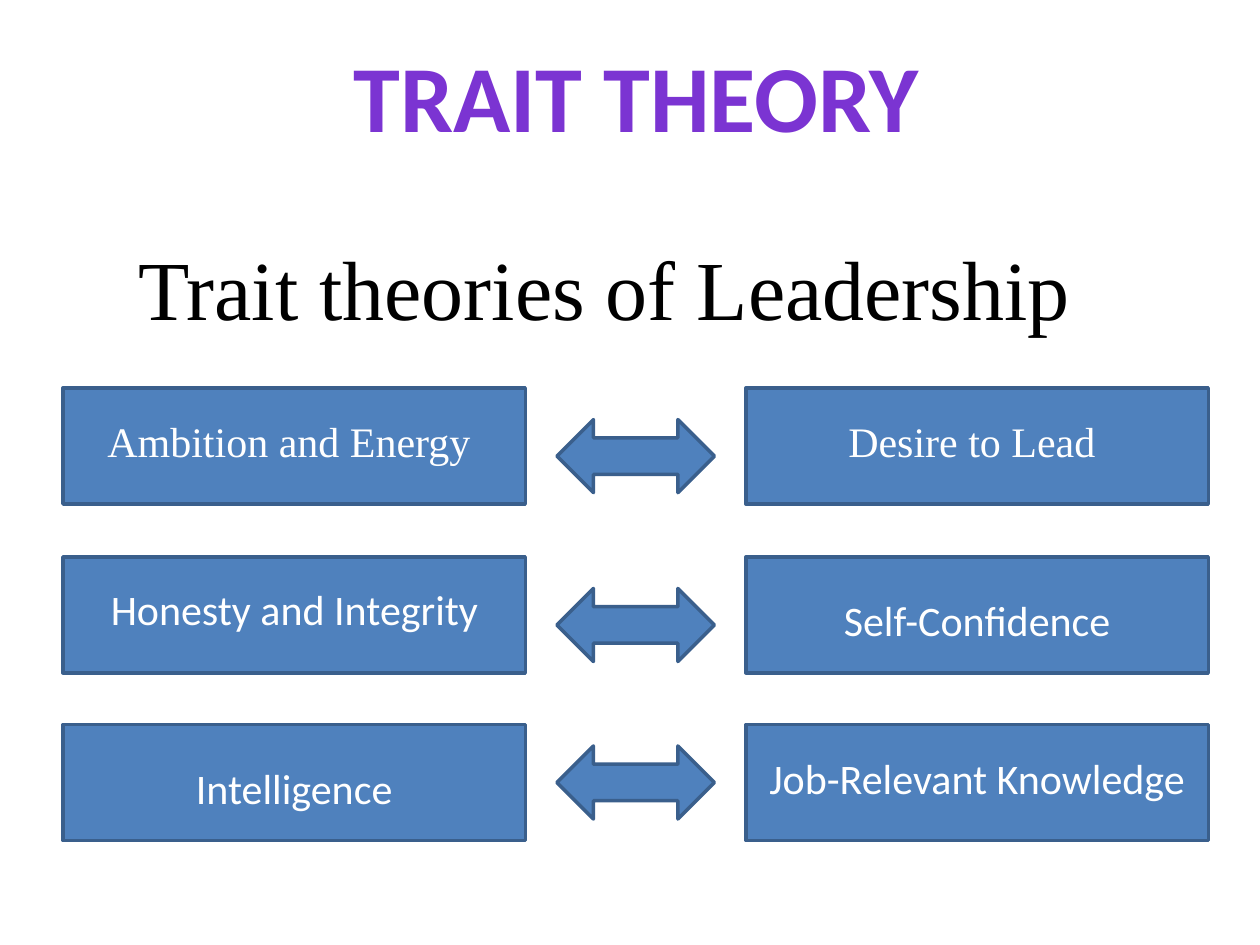
from pptx import Presentation
from pptx import util as u
from pptx.dml.color import RGBColor
from pptx.enum import shapes, text

HUES = {"title": "7B34D2", "ink": "000000", "fill": "4F81BD",
        "edge": "3A5F8C", "white": "FFFFFF"}
SERIF = "Times New Roman"
SANS = "Calibri"

deck = Presentation()
deck.slide_width = u.Inches(10)
deck.slide_height = u.Inches(7.5)
slide = deck.slides.add_slide(deck.slide_layouts[6])


def write(words, box, size=24, font=SANS, hue="white", bold=False,
          align=text.PP_ALIGN.CENTER, wrap=True):
    frame = slide.shapes.add_textbox(*map(u.Inches, box)).text_frame
    frame.word_wrap = wrap
    frame.auto_size = text.MSO_AUTO_SIZE.SHAPE_TO_FIT_TEXT
    para = frame.paragraphs[0]
    para.alignment = align
    run = para.add_run()
    run.text = words
    run.font.size = u.Pt(size)
    run.font.name = font
    run.font.bold = bold
    run.font.color.rgb = RGBColor.from_string(HUES[hue])


def draw(kind, box):
    shape = slide.shapes.add_shape(kind, *map(u.Inches, box))
    shape.shadow.inherit = False
    shape.fill.solid()
    shape.fill.fore_color.rgb = RGBColor.from_string(HUES["fill"])
    shape.line.color.rgb = RGBColor.from_string(HUES["edge"])
    shape.line.width = u.Pt(2)


write("TRAIT THEORY", (2.68, 0.25, 4.74, 1.01), size=54, hue="title",
      bold=True, wrap=False)
write("Trait theories of Leadership", (1, 1.83, 7.92, 0.91), size=48,
      font=SERIF, hue="ink", align=text.PP_ALIGN.LEFT)

left, right, wide = 0.5, 5.92, 3.67
rows = [
    (3.08, 3.33, SERIF, ("Ambition and Energy ", left, 3.25),
     ("Desire to Lead ", right, 3.25)),
    (4.42, 4.67, SANS, ("Honesty and Integrity ", 0.54, 4.58),
     ("Self-Confidence", right, 4.67)),
    (5.75, 5.92, SANS, ("Intelligence", left, 6),
     ("Job-Relevant Knowledge", right, 5.92)),
]
for top, mid, font, *traits in rows:
    draw(shapes.MSO_SHAPE.LEFT_RIGHT_ARROW, (4.42, mid, 1.25, 0.58))
    for side, (words, x, y) in zip((left, right), traits):
        draw(shapes.MSO_SHAPE.RECTANGLE, (side, top, wide, 0.92))
        write(words, (x, y, wide, 0.5), font=font)

deck.save("out.pptx")
